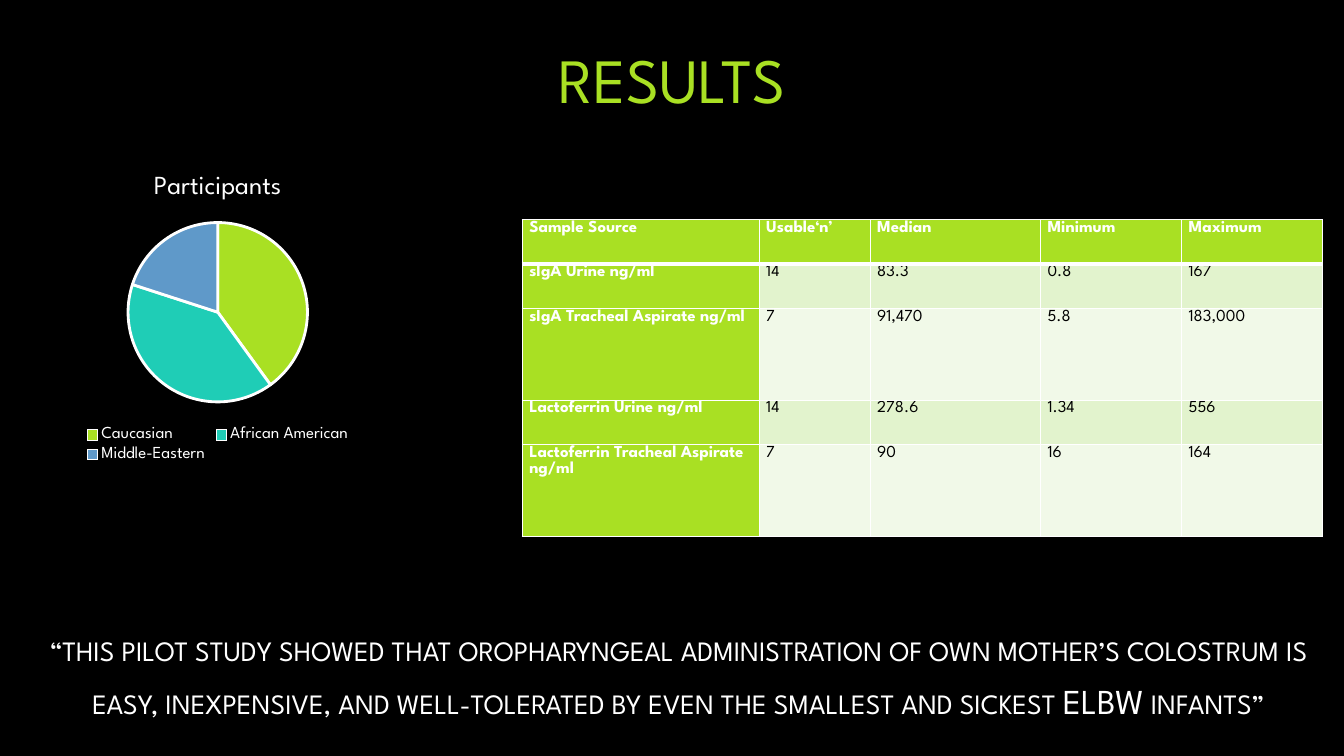
from lxml import etree
from pptx import Presentation
from pptx.chart.data import CategoryChartData
from pptx.dml.color import RGBColor
from pptx.enum.chart import XL_CHART_TYPE as ChartType, XL_LEGEND_POSITION as LegendPosition
from pptx.enum.text import MSO_ANCHOR as Anchor, PP_ALIGN as Align
from pptx.oxml.ns import qn
from pptx.util import Inches, Pt

FONT = "League Spartan"
COLORS = {
    "background": "000000", "text": "FFFFFF", "dark": "000000",
    "green": "A9E023", "teal": "1FCDB6", "blue": "5F99C9",
    "band": "E2F3CD", "pale": "F1F9E8",
}
PARTICIPANTS = [("Caucasian", 40, "green"), ("African American", 40, "teal"),
                ("Middle-Eastern", 20, "blue")]
COLUMN_WIDTHS = [2.35, 1.1, 1.69, 1.4, 1.4]
ROW_HEIGHTS = [0.44, 0.44, 0.91, 0.44, 0.91]
SAMPLES = [
    ["Sample Source", "Usable‘n’", "Median", "Minimum", "Maximum"],
    ["sIgA Urine ng/ml", "14", "83.3", "0.8", "167"],
    ["sIgA Tracheal Aspirate ng/ml", "7", "91,470", "5.8", "183,000"],
    ["Lactoferrin Urine ng/ml", "14", "278.6", "1.34", "556"],
    ["Lactoferrin Tracheal Aspirate ng/ml", "7", "90", "16", "164"],
]
CONCLUSION = ("“this pilot study showed that oropharyngeal administration of own "
              "mother’s colostrum is easy, inexpensive, and well-tolerated by even "
              "the smallest and sickest ELBW infants”")


def rgb(name):
    return RGBColor.from_string(COLORS[name])


def style_font(font, size, color="text", bold=False):
    font.name = FONT
    font.size = Pt(size)
    font.bold = bold
    font.color.rgb = rgb(color)


def write(frame, text, size, color="text", bold=False, align=Align.LEFT,
          anchor=Anchor.TOP, spacing=1.0, small_caps=False):
    frame.word_wrap = True
    frame.vertical_anchor = anchor
    para = frame.paragraphs[0]
    para.alignment = align
    para.line_spacing = spacing
    span = para.add_run()
    span.text = text
    style_font(span.font, size, color, bold)
    if small_caps:
        span.font._element.set("cap", "small")


def place(shape, left, top, width, height):
    shape.left, shape.top = Inches(left), Inches(top)
    shape.width, shape.height = Inches(width), Inches(height)


def add_title(slide, text):
    title = slide.shapes.title
    place(title, 1.25, 0, 10.83, 1.55)
    write(title.text_frame, text, 45, "green", align=Align.CENTER, anchor=Anchor.MIDDLE)


def add_conclusion(slide, text):
    box = slide.shapes.add_textbox(0, 0, 0, 0)
    place(box, 0.13, 5.76, 13.2, 1.74)
    write(box.text_frame, text, 25, align=Align.CENTER, anchor=Anchor.MIDDLE,
          spacing=1.27, small_caps=True)


def add_pie(slide, title, slices):
    names, values, colors = zip(*slices)
    data = CategoryChartData()
    data.categories = names
    data.add_series(title, values)
    chart = slide.shapes.add_chart(ChartType.PIE, Inches(0.13), Inches(1.55),
                                   Inches(4.06), Inches(3.08), data).chart
    style_font(chart.font, 10)
    chart.has_title = True
    write(chart.chart_title.text_frame, title, 18.6)
    chart.has_legend = True
    chart.legend.position = LegendPosition.BOTTOM
    chart.legend.include_in_layout = False
    style_font(chart.legend.font, 12)
    plot = chart.plots[0]
    plot.vary_by_categories = True
    for index, color in enumerate(colors):
        style = plot.series[0].points[index].format
        style.fill.solid()
        style.fill.fore_color.rgb = rgb(color)
        style.line.color.rgb = rgb("text")
        style.line.width = Pt(2)


def add_borders(cell, bottom):
    """Draw white borders: 1 pt, except for the given bottom width."""
    properties = cell._tc.get_or_add_tcPr()
    for index, (side, width) in enumerate(zip("LRTB", (1, 1, 1, bottom))):
        line = etree.Element(qn(f"a:ln{side}"), w=str(Pt(width)))
        fill = etree.SubElement(line, qn("a:solidFill"))
        etree.SubElement(fill, qn("a:srgbClr"), val=COLORS["text"])
        properties.insert(index, line)


def add_samples_table(slide, rows):
    table = slide.shapes.add_table(
        len(rows), len(COLUMN_WIDTHS), Inches(5.18), Inches(2.18),
        Inches(sum(COLUMN_WIDTHS)), Inches(sum(ROW_HEIGHTS))).table
    for column, width in zip(table.columns, COLUMN_WIDTHS):
        column.width = Inches(width)
    for row, height in zip(table.rows, ROW_HEIGHTS):
        row.height = Inches(height)
    for r, texts in enumerate(rows):
        for c, text in enumerate(texts):
            cell = table.cell(r, c)
            heading = r == 0 or c == 0
            cell.margin_left = cell.margin_right = Inches(0.07)
            cell.margin_top = cell.margin_bottom = 0
            cell.fill.solid()
            cell.fill.fore_color.rgb = rgb("green" if heading else ("pale", "band")[r % 2])
            write(cell.text_frame, text, 12, "text" if heading else "dark",
                  bold=heading, spacing=1.07)
            add_borders(cell, bottom=3 if r == 0 else 1)


def main():
    deck = Presentation()
    deck.slide_width, deck.slide_height = Inches(13.33), Inches(7.5)
    slide = deck.slides.add_slide(deck.slide_layouts[5])
    slide.background.fill.solid()
    slide.background.fill.fore_color.rgb = rgb("background")
    add_title(slide, "RESULTS")
    add_conclusion(slide, CONCLUSION)
    add_pie(slide, "Participants", PARTICIPANTS)
    add_samples_table(slide, SAMPLES)
    deck.save("out.pptx")


if __name__ == "__main__":
    main()
